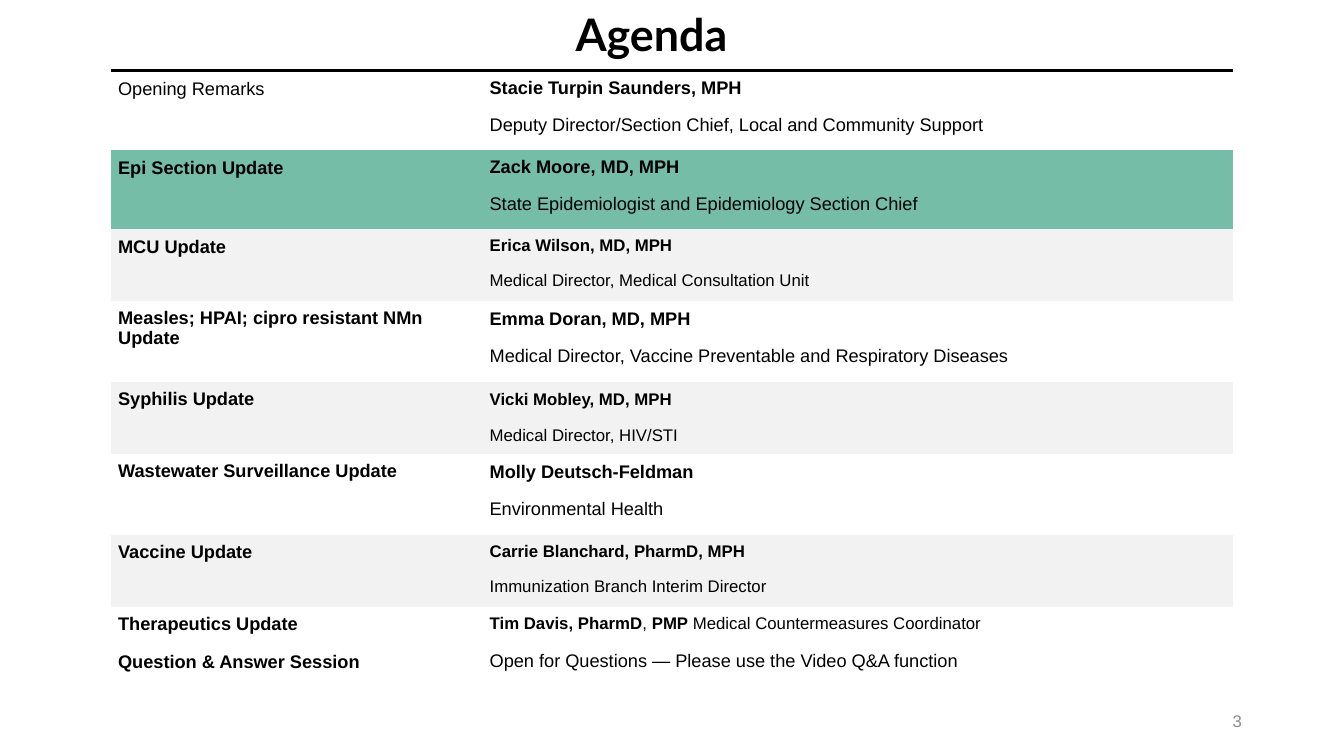
import pptx
import pptx.util
import pptx.dml.color
import pptx.enum.text
import lxml.etree
from dataclasses import dataclass

Pt = pptx.util.Pt
ALIGN = pptx.enum.text.PP_ALIGN
ANCHOR = pptx.enum.text.MSO_ANCHOR

BLACK, GREY, GREEN, BAND = "000000", "8C8C8C", "75BDA7", "F2F2F2"
NO_TABLE_STYLE = "{2D5ABB26-0587-4C30-8999-92F81FD0307C}"
LOOSE = 1.07
MARGIN = 5.2


@dataclass
class Run:
    text: str
    bold: bool = False


@dataclass
class AgendaItem:
    topic: Run
    details: list[list[Run]]
    height: float
    fill: str | None = None
    size: float = 13
    topic_spacing: float = 1.0
    detail_spacing: float = 1.0


def speaker(name: str, role: str) -> list[list[Run]]:
    return [[Run(name, True)], [Run(role)]]


ITEMS = [
    AgendaItem(Run("Opening Remarks"),
               speaker("Stacie Turpin Saunders, MPH",
                       "Deputy Director/Section Chief, Local and Community Support"),
               56.4, topic_spacing=LOOSE),
    AgendaItem(Run("Epi Section Update", True),
               speaker("Zack Moore, MD, MPH",
                       "State Epidemiologist and Epidemiology Section Chief"),
               56.4, GREEN, topic_spacing=LOOSE),
    AgendaItem(Run("MCU Update", True),
               speaker("Erica Wilson, MD, MPH",
                       "Medical Director, Medical Consultation Unit"),
               51.4, BAND, 12, topic_spacing=LOOSE),
    AgendaItem(Run("Measles; HPAI; cipro resistant NMn Update", True),
               speaker("Emma Doran, MD, MPH",
                       "Medical Director, Vaccine Preventable and Respiratory Diseases"),
               57.9, detail_spacing=LOOSE),
    AgendaItem(Run("Syphilis Update", True),
               speaker("Vicki Mobley, MD, MPH", "Medical Director, HIV/STI"),
               51.4, BAND, 12, detail_spacing=LOOSE),
    AgendaItem(Run("Wastewater Surveillance Update", True),
               speaker("Molly Deutsch-Feldman", "Environmental Health"),
               57.9, detail_spacing=LOOSE),
    AgendaItem(Run("Vaccine Update", True),
               speaker("Carrie Blanchard, PharmD, MPH",
                       "Immunization Branch Interim Director"),
               51.4, BAND, 12),
    AgendaItem(Run("Therapeutics Update", True),
               [[Run("Tim Davis, PharmD", True), Run(", "), Run("PMP", True),
                 Run(" Medical Countermeasures Coordinator")]],
               26.4, size=12),
    AgendaItem(Run("Question & Answer Session", True),
               [[Run("Open for Questions — Please use the Video Q&A function")]],
               28.8, topic_spacing=LOOSE),
]


def rgb(color: str) -> pptx.dml.color.RGBColor:
    return pptx.dml.color.RGBColor.from_string(color)


def set_font(p, name: str, size: float, color: str) -> None:
    p.font.name = name
    p.font.size = Pt(size)
    p.font.color.rgb = rgb(color)


def fill_cell(cell, paragraphs: list[list[Run]], size: float,
              spacing: float, fill: str | None) -> None:
    cell.margin_left = cell.margin_right = Pt(MARGIN)
    cell.margin_top = cell.margin_bottom = Pt(MARGIN)
    cell.vertical_anchor = ANCHOR.TOP
    if fill:
        cell.fill.solid()
        cell.fill.fore_color.rgb = rgb(fill)
    else:
        cell.fill.background()
    tf = cell.text_frame
    for i, runs in enumerate(paragraphs):
        p = tf.add_paragraph() if i else tf.paragraphs[0]
        p.space_before = Pt(6 if i else 0)
        p.space_after = Pt(6)
        p.line_spacing = 1.0 if i else spacing
        set_font(p, "Arial", size, BLACK)
        for run in runs:
            r = p.add_run()
            r.text = run.text
            r.font.bold = run.bold


def add_top_border(cell, color: str, width: float) -> None:
    ns = pptx.oxml.ns.qn
    ln = lxml.etree.Element(ns("a:lnT"), w=str(Pt(width)))
    solid = lxml.etree.SubElement(ln, ns("a:solidFill"))
    lxml.etree.SubElement(solid, ns("a:srgbClr"), val=color)
    cell._tc.get_or_add_tcPr().insert(0, ln)


def add_agenda(s, items: list[AgendaItem]) -> None:
    widths = (265.4, 536)
    frame = s.shapes.add_table(len(items), len(widths), Pt(79.2), Pt(50.6),
                               Pt(sum(widths)), Pt(sum(i.height for i in items)))
    table = frame.table
    table.first_row = table.horz_banding = False
    frame._element.find(".//" + pptx.oxml.ns.qn("a:tableStyleId")).text = NO_TABLE_STYLE
    for column, width in zip(table.columns, widths):
        column.width = Pt(width)
    for row, item in zip(table.rows, items):
        row.height = Pt(item.height)
        topic, details = row.cells
        fill_cell(topic, [[item.topic]], 13, item.topic_spacing, item.fill)
        fill_cell(details, item.details, item.size, item.detail_spacing, item.fill)
    for cell in table.rows[0].cells:
        add_top_border(cell, BLACK, 2.25)


def add_title(s, text: str) -> None:
    sp = s.shapes.title
    sp.left, sp.top, sp.width, sp.height = Pt(403.9), Pt(1.4), Pt(348.5), Pt(46)
    tf = sp.text_frame
    tf.text = text
    tf.vertical_anchor = ANCHOR.TOP
    tf.auto_size = pptx.enum.text.MSO_AUTO_SIZE.NONE
    p = tf.paragraphs[0]
    p.alignment = ALIGN.LEFT
    set_font(p, "Lato", 32, BLACK)
    p.font.bold = True


def add_page_number(s, number: str) -> None:
    tf = s.shapes.add_textbox(Pt(678.2), Pt(500.4), Pt(216), Pt(28.8)).text_frame
    tf.word_wrap = True
    tf.vertical_anchor = ANCHOR.MIDDLE
    tf.text = number
    p = tf.paragraphs[0]
    p.alignment = ALIGN.RIGHT
    set_font(p, "Arial", 12, GREY)


def main() -> None:
    prs = pptx.Presentation()
    prs.slide_width, prs.slide_height = Pt(960), Pt(540)
    s = prs.slides.add_slide(prs.slide_layouts.get_by_name("Title Only"))
    add_title(s, "Agenda")
    add_agenda(s, ITEMS)
    add_page_number(s, "3")
    prs.save("out.pptx")


if __name__ == "__main__":
    main()
